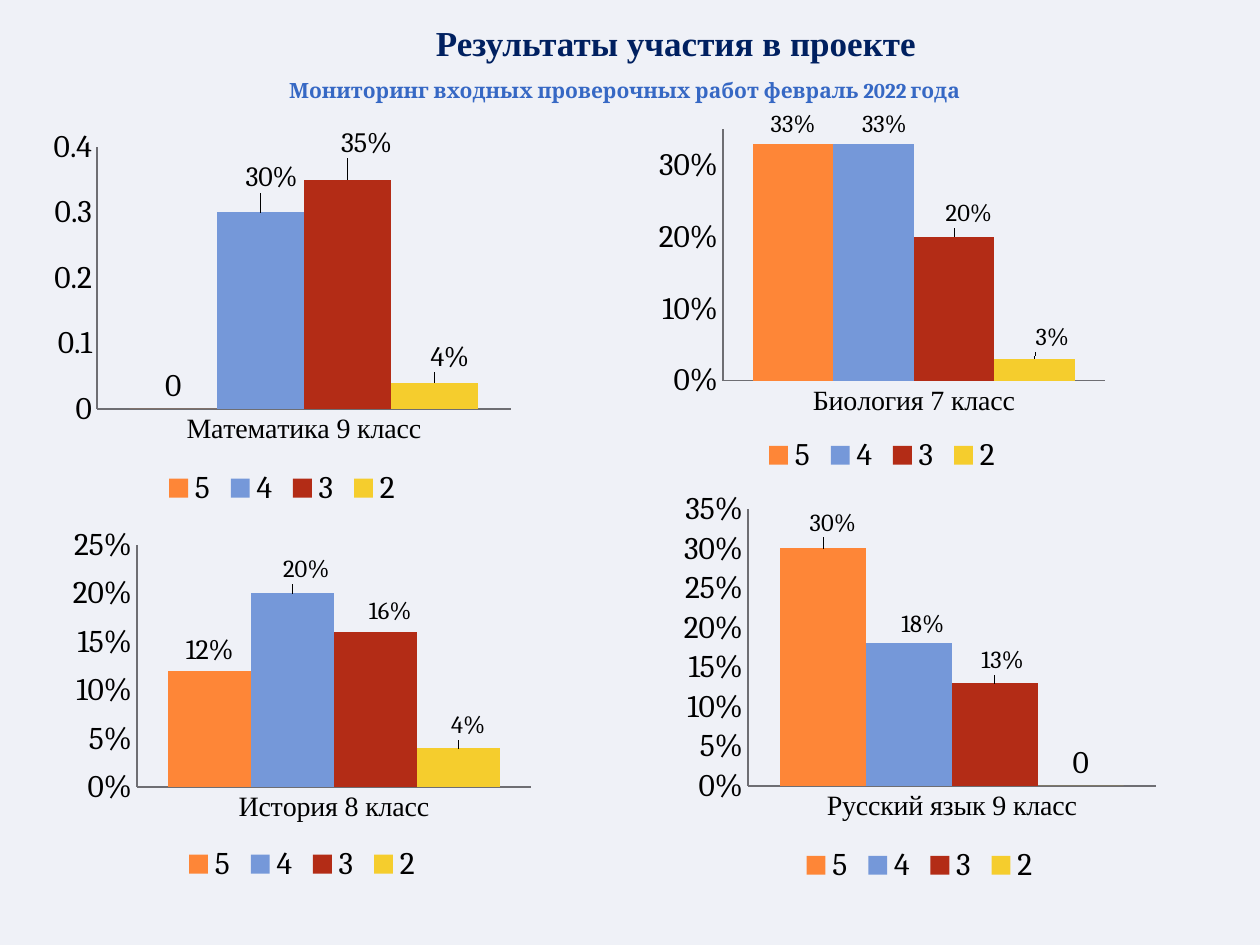
from dataclasses import dataclass

from lxml.etree import Element, SubElement
from pptx import Presentation
from pptx.chart.data import CategoryChartData
from pptx.dml.color import RGBColor
from pptx.enum.chart import XL_CHART_TYPE as ChartType
from pptx.enum.chart import XL_LABEL_POSITION as LabelPosition
from pptx.enum.chart import XL_LEGEND_POSITION as LegendPosition
from pptx.enum.chart import XL_TICK_MARK as TickMark
from pptx.enum.shapes import MSO_SHAPE as Shape
from pptx.enum.text import MSO_ANCHOR as Anchor
from pptx.enum.text import PP_ALIGN as Align
from pptx.oxml.ns import qn
from pptx.util import Pt

EMU_PER_PX = 914400 / 126


@dataclass(frozen=True)
class Theme:
    background: str = "EFF1F7"
    title: str = "002060"
    subtitle: str = "3668C4"
    text: str = "000000"
    axis: str = "6E6E73"
    grades: tuple = (("5", "FE8637"), ("4", "7598D9"), ("3", "B32C16"), ("2", "F5CD2D"))
    serif: str = "Times New Roman"
    chart_font: str = "Cambria"
    title_size: int = 20
    subtitle_size: int = 12
    chart_size: int = 18
    category_size: int = 16


@dataclass(frozen=True)
class Label:
    """Type size of a value label and its shift from the usual place, in px."""
    size: int
    dx: int = 0
    dy: int = 0


def px(length):
    return round(length * EMU_PER_PX)


def rgb(code):
    return RGBColor.from_string(code)


def manual_layout(**values):
    layout = Element(qn("c:layout"))
    manual = SubElement(layout, qn("c:manualLayout"))
    for name, value in values.items():
        SubElement(manual, qn(f"c:{name}")).set("val", str(value))
    return layout


class SlideBuilder:
    def __init__(self, page, theme):
        self.page = page
        self.theme = theme
        page.background.fill.solid()
        page.background.fill.fore_color.rgb = rgb(theme.background)

    def style(self, font, size, color=None, name=None, bold=False):
        font.size = Pt(size)
        font.bold = bold
        font.name = name or self.theme.chart_font
        font.color.rgb = rgb(color or self.theme.text)

    def heading(self, box, text, size, color, name):
        frame = box.text_frame
        frame.word_wrap = True
        frame.vertical_anchor = Anchor.TOP
        para = frame.paragraphs[0]
        para.text = text
        para.alignment = Align.CENTER
        self.style(para.font, size, color, name, bold=True)

    def title(self, area, text):
        box = self.page.shapes.add_textbox(*map(px, area))
        self.heading(box, text, self.theme.title_size, self.theme.title, self.theme.serif)

    def subtitle(self, area, text):
        box = self.page.shapes.add_shape(Shape.RECTANGLE, *map(px, area))
        box.shadow.inherit = False
        box.fill.solid()
        box.fill.fore_color.rgb = rgb(self.theme.background)
        box.line.fill.background()
        self.heading(box, text, self.theme.subtitle_size, self.theme.subtitle,
                     self.theme.chart_font)

    def chart(self, area, plot, subject, values, labels, top, step, axis_format="0%"):
        """Column chart of grade shares; area and plot are left, top, width, height."""
        data = CategoryChartData()
        data.categories = [subject]
        for (grade, _), value in zip(self.theme.grades, values):
            data.add_series(grade, [value], "0%" if value else "General")
        frame = self.page.shapes.add_chart(
            ChartType.COLUMN_CLUSTERED, *map(px, area), data)
        chart = frame.chart
        chart.has_title = False
        self.style(chart.font, self.theme.chart_size)
        chart.has_legend = True
        chart.legend.position = LegendPosition.BOTTOM
        chart.legend.include_in_layout = False
        self.style(chart.legend.font, self.theme.chart_size)

        self.axes(chart, top, step, axis_format)
        self.place_plot(chart, area, plot)
        columns = chart.plots[0]
        columns.gap_width = 75
        columns.overlap = 0
        columns.vary_by_categories = False
        for series, (_, color), value, label in zip(
                columns.series, self.theme.grades, values, labels):
            series.format.fill.solid()
            series.format.fill.fore_color.rgb = rgb(color)
            self.value_label(series, label, "0%" if value else "General", area)

    def axes(self, chart, top, step, axis_format):
        category, value = chart.category_axis, chart.value_axis
        for axis in (category, value):
            axis.has_major_gridlines = False
            axis.major_tick_mark = axis.minor_tick_mark = TickMark.NONE
            axis.format.line.color.rgb = rgb(self.theme.axis)
            axis.format.line.width = Pt(1)
        self.style(category.tick_labels.font, self.theme.category_size,
                   name=self.theme.serif)
        self.style(value.tick_labels.font, self.theme.chart_size)
        value.minimum_scale, value.maximum_scale = 0, top
        value.major_unit = step
        value.tick_labels.number_format = axis_format
        value.tick_labels.number_format_is_linked = False

    def place_plot(self, chart, area, plot):
        left, top, width, height = area
        plot_area = chart._chartSpace.find(".//" + qn("c:plotArea"))
        for old in plot_area.findall(qn("c:layout")):
            plot_area.remove(old)
        plot_area.insert(0, manual_layout(
            layoutTarget="inner", xMode="edge", yMode="edge",
            x=round((plot[0] - left) / width, 4), y=round((plot[1] - top) / height, 4),
            w=round(plot[2] / width, 4), h=round(plot[3] / height, 4)))

    def value_label(self, series, label, number_format, area):
        common = series.data_labels
        common.show_value = True
        common.number_format = number_format
        common.number_format_is_linked = False
        common.position = LabelPosition.OUTSIDE_END
        self.style(common.font, label.size)
        if not (label.dx or label.dy):
            return
        point = series.points[0].data_label
        point.position = LabelPosition.OUTSIDE_END
        self.style(point.font, label.size)
        element = series._element.find(".//" + qn("c:dLbl"))
        element.insert(1, manual_layout(
            x=round(label.dx / area[2], 4), y=round(label.dy / area[3], 4)))
        format_code = Element(qn("c:numFmt"), formatCode=number_format, sourceLinked="0")
        element.insert(2, format_code)


def main():
    deck = Presentation()
    deck.slide_width, deck.slide_height = px(1260), px(945)
    slide = SlideBuilder(deck.slides.add_slide(deck.slide_layouts[6]), Theme())
    slide.title((246, 15, 860, 55), "Результаты участия в проекте")
    slide.subtitle((144, 71, 962, 38),
                   "Мониторинг входных проверочных работ февраль 2022 года")

    slide.chart((44, 121, 476, 392), (97, 147, 414, 262), "Математика 9 класс",
                (0, 0.3, 0.35, 0.04),
                (Label(18), Label(16, 11, -14), Label(16, 19, -16), Label(16, 15, -5)),
                top=0.4, step=0.1, axis_format="General")
    slide.chart((650, 110, 464, 370), (723, 127, 382, 253), "Биология 7 класс",
                (0.33, 0.33, 0.2, 0.03),
                (Label(14), Label(14, 11), Label(14, 15, -4), Label(14, 18, -2)),
                top=0.35, step=0.1)
    slide.chart((63, 519, 478, 370), (137, 545, 394, 242), "История 8 класс",
                (0.12, 0.2, 0.16, 0.04),
                (Label(16), Label(14, 14, -4), Label(14, 15, -1), Label(14, 10, -3)),
                top=0.25, step=0.05)
    slide.chart((674, 483, 491, 407), (748, 509, 408, 277), "Русский язык 9 класс",
                (0.3, 0.18, 0.13, 0),
                (Label(14, 10, -6), Label(14, 14), Label(14, 8, -3), Label(18)),
                top=0.35, step=0.05)
    deck.save("out.pptx")


if __name__ == "__main__":
    main()
